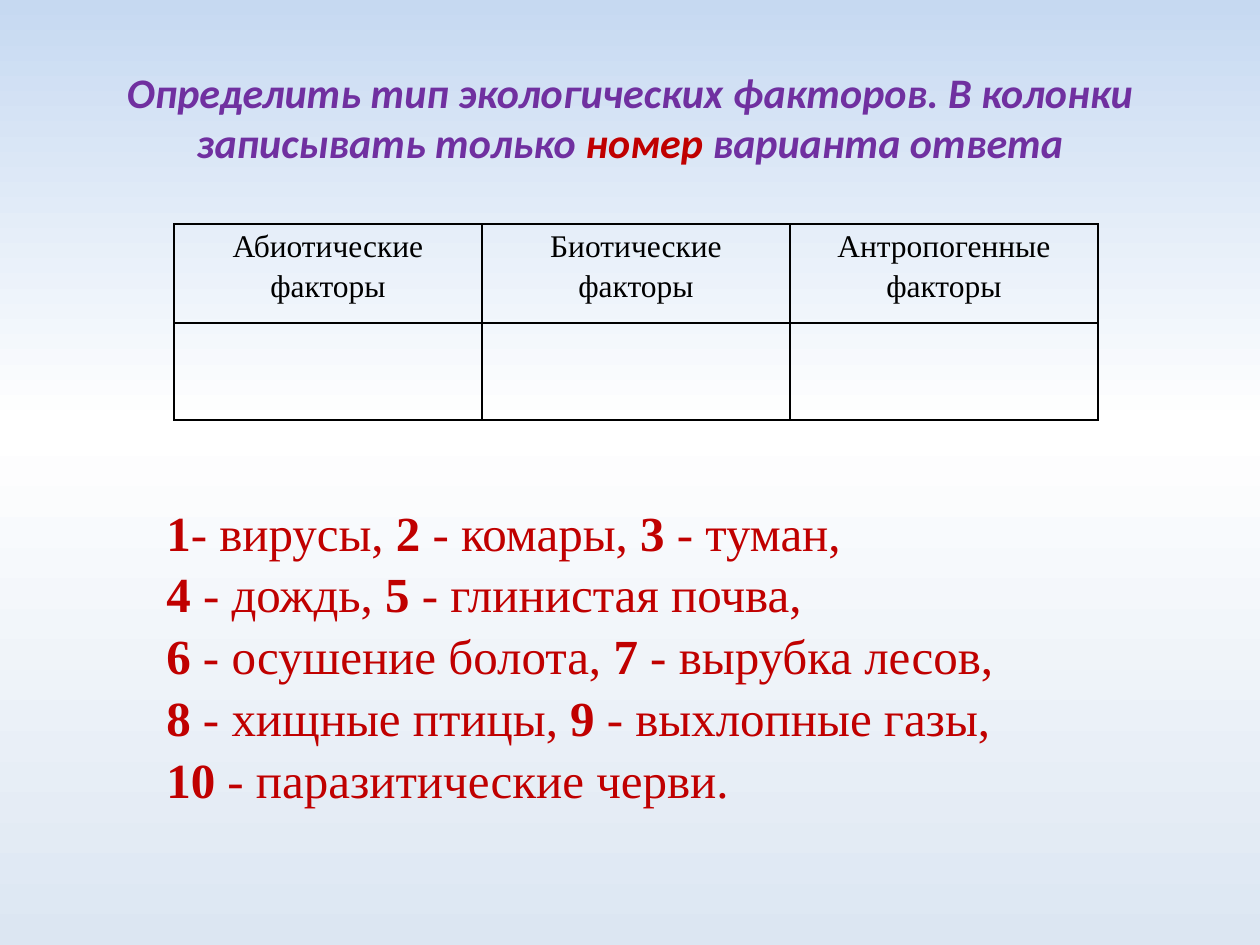
from copy import deepcopy
from dataclasses import dataclass

from lxml.etree import SubElement
from pptx import Presentation
from pptx.dml.color import RGBColor
from pptx.enum.text import MSO_ANCHOR, MSO_AUTO_SIZE, PP_ALIGN
from pptx.oxml.ns import qn
from pptx.util import Pt

SCALE = 914400 // 126  # EMU in one px


@dataclass(frozen=True)
class Theme:
    sky: tuple = ((0, "C6D9F1"), (45, "FFFFFF"), (100, "DCE6F2"))
    violet: str = "7030A0"
    red: str = "C00000"
    black: str = "000000"
    sans: str = "Calibri"
    serif: str = "Times New Roman"
    title: int = 24
    head: int = 18
    body: int = 28


THEME = Theme()
HEADS = ("Абиотические факторы", "Биотические факторы", "Антропогенные факторы")
TITLE = (
    "Определить тип экологических факторов. В колонки записывать только ",
    "номер",
    " варианта ответа",
)
# Each line alternates bold numbers with plain answers
LINES = (
    ("1", "- вирусы,", " 2 ", "- комары, ", "3 ", "- туман,"),
    ("4 ", "- дождь, ", "5 ", "- глинистая почва,"),
    ("6", " - осушение болота, ", "7", " - вырубка лесов,"),
    ("8", " - хищные птицы, ", "9", " - выхлопные газы,"),
    ("10", " - паразитические черви."),
)


def px(*nums):
    return [num * SCALE for num in nums]


def apply(item, **style):
    for name, value in style.items():
        setattr(item, name, value)


def place(shape, *box):
    apply(shape, **dict(zip(("left", "top", "width", "height"), px(*box))))


def add_run(para, text, color, **style):
    run = para.add_run()
    run.text = text
    apply(run.font, **style)
    run.font.color.rgb = RGBColor.from_string(color)


def paint_back(slide):
    fill = slide.background.fill
    fill.gradient()
    fill.gradient_angle = 270
    # Three stops take the place of the two default ones
    stops = next(slide.element.iter(qn("a:gsLst")))
    for stop in list(stops):
        stops.remove(stop)
    for pos, color in THEME.sky:
        stop = SubElement(stops, qn("a:gs"), pos=str(pos * 1000))
        SubElement(stop, qn("a:srgbClr"), val=color)


def set_title(slide):
    title = slide.shapes.title
    place(title, 63, 38, 1134, 157)
    frame = title.text_frame
    apply(frame, word_wrap=True, vertical_anchor=MSO_ANCHOR.MIDDLE)
    para = frame.paragraphs[0]
    para.alignment = PP_ALIGN.CENTER
    for text, color in zip(TITLE, (THEME.violet, THEME.red, THEME.violet)):
        add_run(para, text, color, name=THEME.sans, size=Pt(THEME.title),
                bold=True, italic=True)


def add_edges(cell):
    props = cell._tc.get_or_add_tcPr()
    line = SubElement(props, qn("a:lnL"), w=str(Pt(1)))
    fill = SubElement(line, qn("a:solidFill"))
    SubElement(fill, qn("a:srgbClr"), val=THEME.black)
    for side in ("a:lnR", "a:lnT", "a:lnB"):
        edge = deepcopy(line)
        edge.tag = qn(side)
        props.append(edge)


def add_grid(slide):
    rows, wide = (99, 97), 308
    table = slide.shapes.add_table(
        len(rows), len(HEADS), *px(174, 224, wide * len(HEADS), sum(rows))
    ).table
    apply(table, first_row=False, horz_banding=False)
    for row, high in zip(table.rows, rows):
        row.height = high * SCALE
    for cell in table.iter_cells():
        add_edges(cell)
        cell.fill.background()
        apply(cell, margin_left=9 * SCALE, margin_right=9 * SCALE,
              margin_top=0, margin_bottom=0)
    # Column heads
    for col, text in enumerate(HEADS):
        para = table.cell(0, col).text_frame.paragraphs[0]
        apply(para, alignment=PP_ALIGN.CENTER, line_spacing=1.15)
        add_run(para, text, THEME.black, name=THEME.serif, size=Pt(THEME.head))


def add_list(slide):
    box = slide.shapes.add_textbox(*px(154, 493, 973, 310))
    frame = box.text_frame
    apply(frame, word_wrap=True, auto_size=MSO_AUTO_SIZE.SHAPE_TO_FIT_TEXT)
    for num, line in enumerate(LINES):
        para = frame.add_paragraph() if num else frame.paragraphs[0]
        para.line_spacing = 1.05
        for pos, text in enumerate(line):
            add_run(para, text, THEME.red, name=THEME.serif,
                    size=Pt(THEME.body), bold=pos % 2 == 0)


def main():
    deck = Presentation()
    apply(deck, **dict(zip(("slide_width", "slide_height"), px(1260, 945))))
    slide = deck.slides.add_slide(deck.slide_layouts[5])
    paint_back(slide)
    set_title(slide)
    add_grid(slide)
    add_list(slide)
    deck.save("out.pptx")


if __name__ == "__main__":
    main()
